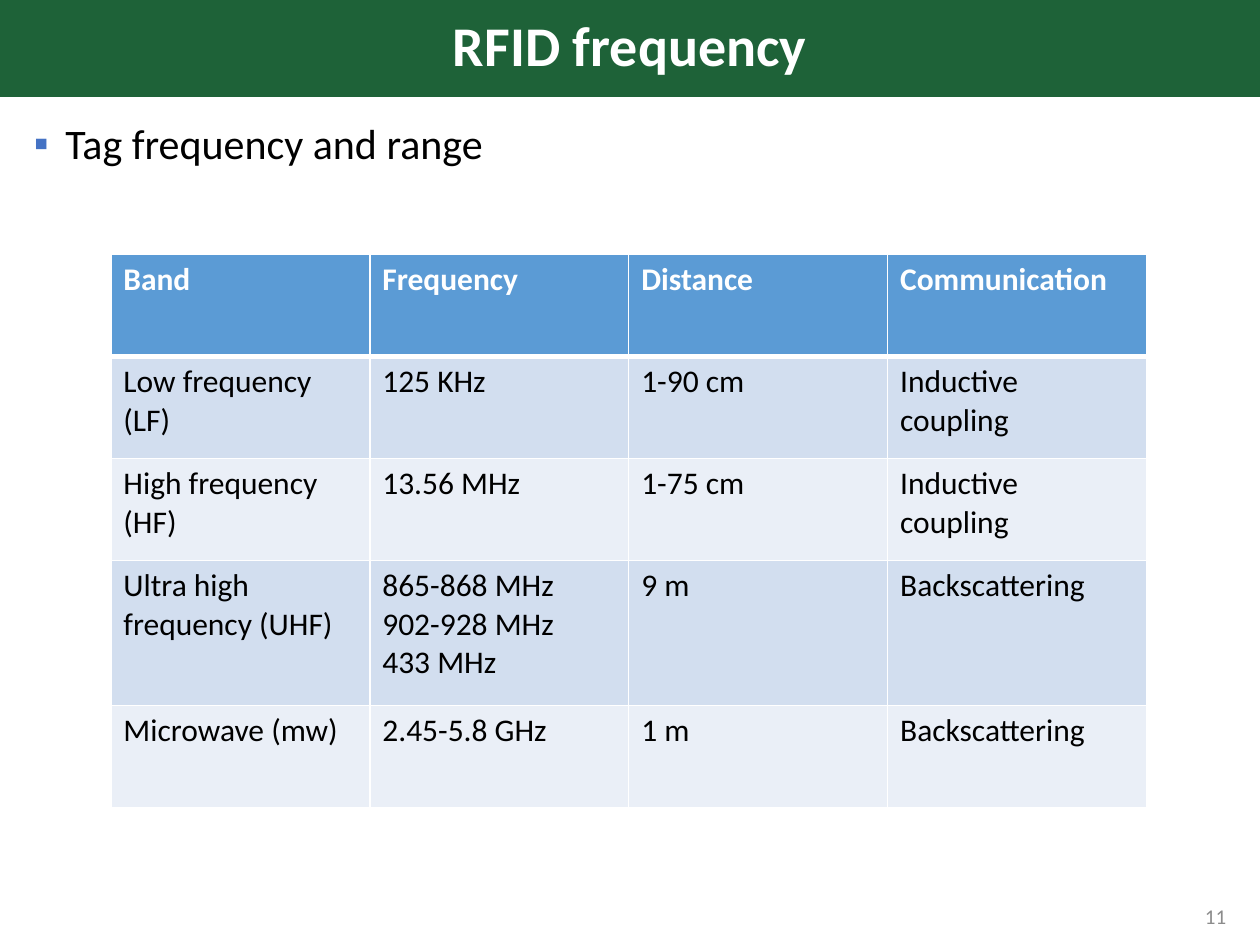
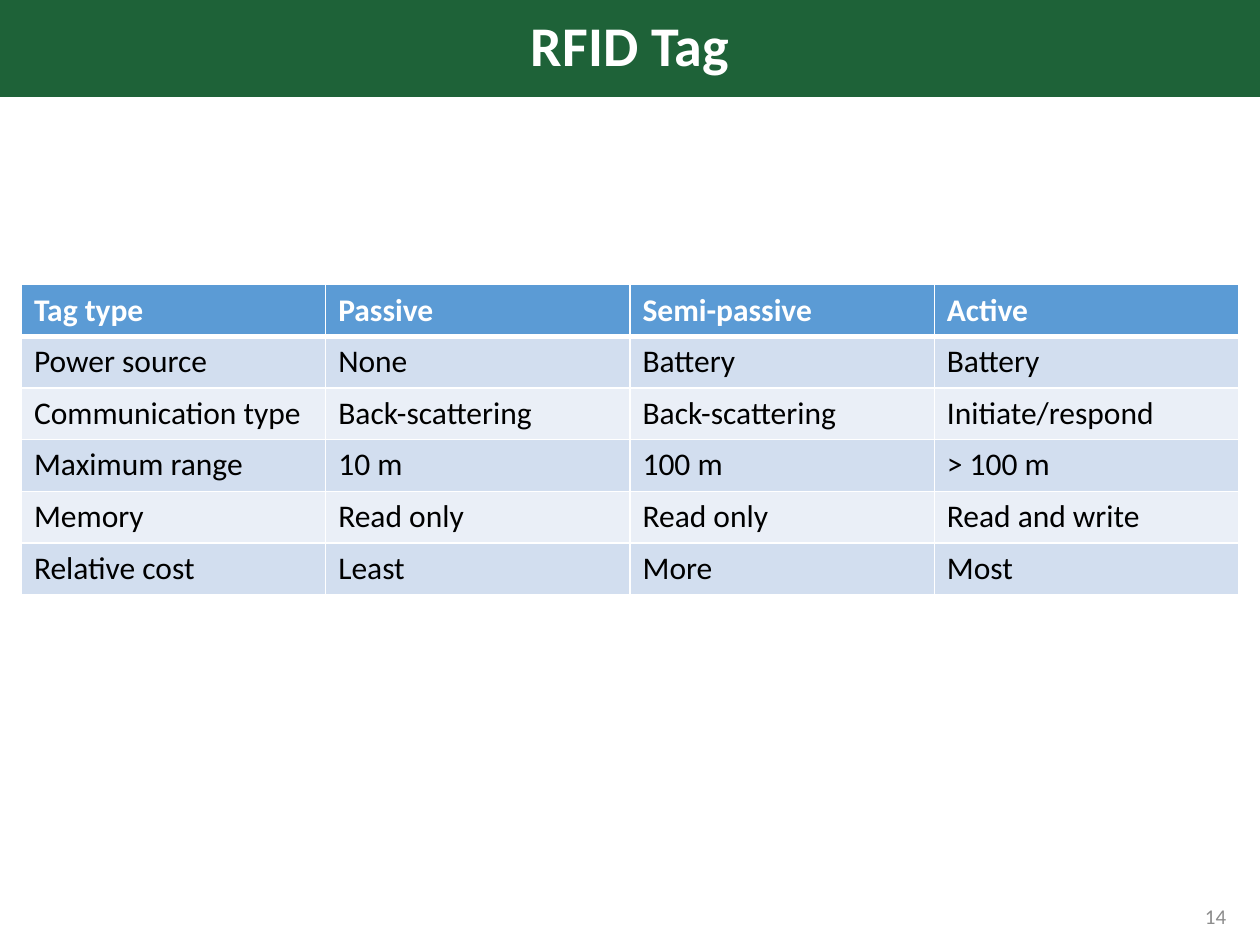
from lxml import etree
from pptx import Presentation
from pptx.dml.color import RGBColor
from pptx.enum import text
from pptx.oxml import ns
from pptx.util import Inches, Pt

FONT = "Calibri"
GREEN = RGBColor(0x1E, 0x62, 0x38)
HEADER_BLUE = RGBColor(0x5B, 0x9B, 0xD5)
BAND_DARK = RGBColor(0xD2, 0xDE, 0xEF)
BAND_LIGHT = RGBColor(0xEA, 0xEF, 0xF7)
BULLET_BLUE = RGBColor(0x44, 0x72, 0xC4)
GREY = RGBColor(0x8C, 0x8C, 0x8C)
WHITE = RGBColor(0xFF, 0xFF, 0xFF)
BLACK = RGBColor(0, 0, 0)

MARGIN = 0.17
CONTENT_WIDTH = 9.66
RULE, HEADER_RULE = 1, 3  # cell border widths in points

FREQUENCY_BANDS = [
    ["Band", "Frequency", "Distance", "Communication"],
    ["Low frequency (LF)", "125 KHz", "1-90 cm", "Inductive coupling"],
    ["High frequency (HF)", "13.56 MHz", "1-75 cm", "Inductive coupling"],
    ["Ultra high frequency (UHF)", "865-868 MHz\n902-928 MHz\n433 MHz", "9 m", "Backscattering"],
    ["Microwave (mw)", "2.45-5.8 GHz", "1 m", "Backscattering"],
]
TAG_TYPES = [
    ["Tag type", "Passive", "Semi-passive", "Active"],
    ["Power source", "None", "Battery", "Battery"],
    ["Communication type", "Back-scattering", "Back-scattering", "Initiate/respond"],
    ["Maximum range", "10 m", "100 m", "> 100 m"],
    ["Memory", "Read only", "Read only", "Read and write"],
    ["Relative cost", "Least", "More", "Most"],
]


class Deck:
    """Holds the shared style and the slide being built."""

    def __init__(self):
        self.prs = Presentation()
        self.prs.slide_width, self.prs.slide_height = Inches(10), Inches(7.5)
        self.slide = None

    def style(self, frame, size, color, bold=False):
        for paragraph in frame.paragraphs:
            for run in paragraph.runs:
                run.font.name, run.font.size = FONT, Pt(size)
                run.font.bold, run.font.color.rgb = bold, color

    def add_slide(self, heading):
        """Start a title-only slide with the green title band."""
        self.slide = self.prs.slides.add_slide(self.prs.slide_layouts[5])
        band = self.slide.shapes.title
        band.left, band.top = Inches(0), Inches(0)
        band.width, band.height = Inches(10), Inches(0.77)
        band.fill.solid()
        band.fill.fore_color.rgb = GREEN
        frame = band.text_frame
        frame.text = heading
        frame.auto_size = text.MSO_AUTO_SIZE.NONE
        frame.vertical_anchor = text.MSO_ANCHOR.MIDDLE
        frame.paragraphs[0].alignment = text.PP_ALIGN.CENTER
        frame.paragraphs[0].line_spacing = 0.9
        self.style(frame, 32, WHITE, bold=True)

    def add_text(self, words, left, top, width, height, size, color):
        box = self.slide.shapes.add_textbox(
            Inches(left), Inches(top), Inches(width), Inches(height))
        frame = box.text_frame
        frame.word_wrap = True
        frame.text = words
        self.style(frame, size, color)
        return frame

    def add_bullet(self, words):
        frame = self.add_text(words, MARGIN, 0.93, CONTENT_WIDTH, 6.41, 24, BLACK)
        point = frame.paragraphs[0]
        point.line_spacing, point.space_before = 0.9, Pt(10)
        props = point._p.get_or_add_pPr()
        props.set("marL", str(Inches(0.25)))
        props.set("indent", str(-Inches(0.25)))
        color = etree.SubElement(props, ns.qn("a:buClr"))
        etree.SubElement(color, ns.qn("a:srgbClr"), val=str(BULLET_BLUE))
        etree.SubElement(props, ns.qn("a:buFont"), typeface="Arial")
        etree.SubElement(props, ns.qn("a:buChar"), char="▪")

    def add_page_number(self, number):
        frame = self.add_text(str(number), 7.58, 7.07, 2.25, 0.4, 12, GREY)
        frame.vertical_anchor = text.MSO_ANCHOR.MIDDLE
        frame.paragraphs[0].alignment = text.PP_ALIGN.RIGHT

    def add_borders(self, cell, top, bottom):
        props = cell._tc.get_or_add_tcPr()
        widths = {"lnL": RULE, "lnR": RULE, "lnT": top, "lnB": bottom}
        for place, (side, width) in enumerate(widths.items()):
            line = etree.Element(ns.qn(f"a:{side}"), w=str(Pt(width)))
            fill = etree.SubElement(line, ns.qn("a:solidFill"))
            etree.SubElement(fill, ns.qn("a:srgbClr"), val=str(WHITE))
            props.insert(place, line)

    def add_table(self, rows, left, top, width, heights):
        """Add a table of equal columns: blue header, then banded rows."""
        columns = len(rows[0])
        table = self.slide.shapes.add_table(
            len(rows), columns, Inches(left), Inches(top),
            Inches(width), Inches(sum(heights))).table
        for column in table.columns:
            column.width = Inches(width / columns)
        for r, (values, height) in enumerate(zip(rows, heights)):
            table.rows[r].height = Inches(height)
            header = r == 0
            shade = HEADER_BLUE if header else (BAND_LIGHT, BAND_DARK)[r % 2]
            for c, value in enumerate(values):
                cell = table.cell(r, c)
                cell.text_frame.text = value
                self.style(cell.text_frame, 18, WHITE if header else BLACK, header)
                cell.fill.solid()
                cell.fill.fore_color.rgb = shade
                self.add_borders(cell, HEADER_RULE if r == 1 else RULE,
                                 HEADER_RULE if header else RULE)


def main():
    deck = Deck()

    # Frequency bands and their reading range
    deck.add_slide("RFID frequency")
    deck.add_bullet("Tag frequency and range")
    deck.add_page_number(11)
    deck.add_table(FREQUENCY_BANDS, 0.88, 2.02, 8.22, [0.81, 0.81, 0.81, 1.15, 0.81])

    # Comparison of tag types
    deck.add_slide("RFID Tag")
    deck.add_table(TAG_TYPES, MARGIN, 2.26, CONTENT_WIDTH, [0.41] * len(TAG_TYPES))
    deck.add_page_number(14)

    deck.prs.save("out.pptx")


if __name__ == "__main__":
    main()
